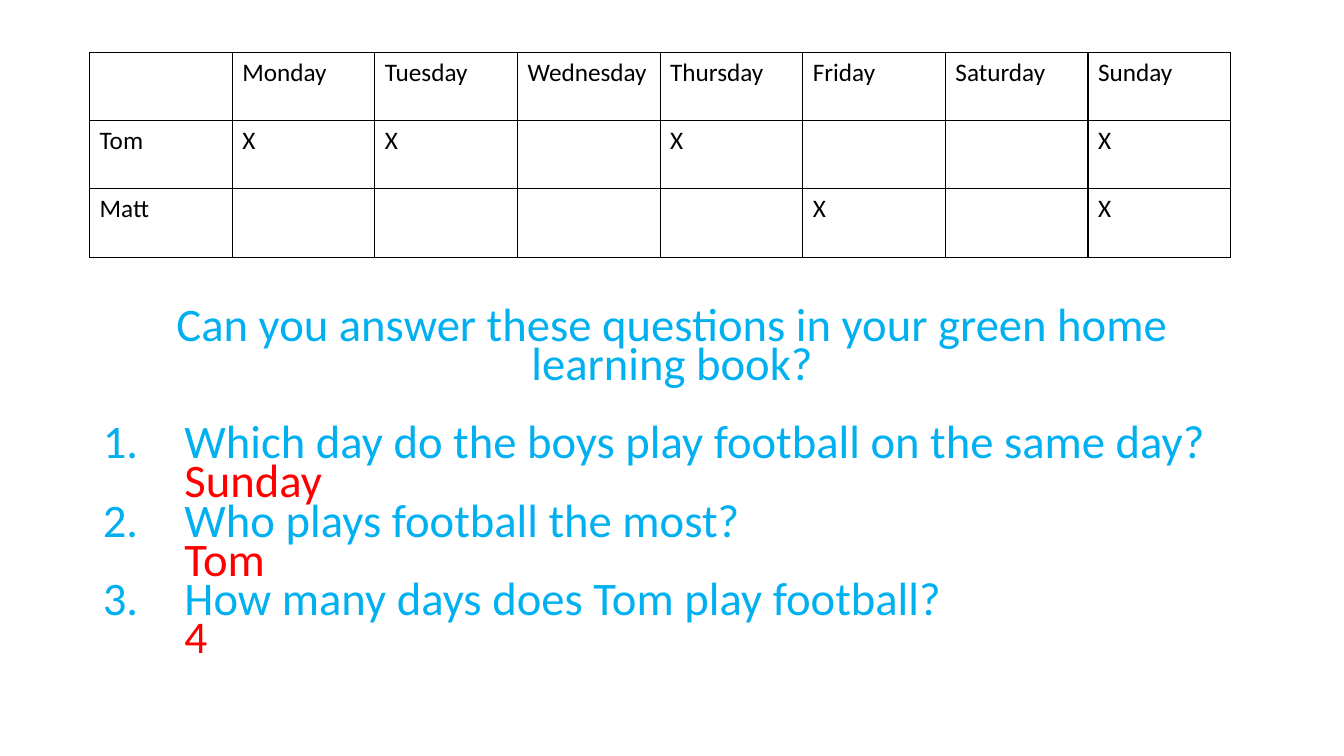
import pptx
import pptx.util
import pptx.dml.color
import pptx.enum.text
import pptx.oxml
import pptx.oxml.ns

# Content
DAYS = ["Monday", "Tuesday", "Wednesday", "Thursday", "Friday", "Saturday", "Sunday"]
PLAYS = {
    "Tom": {"Monday", "Tuesday", "Thursday", "Sunday"},
    "Matt": {"Friday", "Sunday"},
}
HEADING = "Can you answer these questions in your green home learning book?"
# Question, answer, answer size, whether the answer starts on a forced new line
QUIZ = [
    ("Which day do the boys play football on the same day? ", "Sunday", 33.3, False),
    ("Who plays football the most?", "Tom", 33.3, True),
    ("How many days does Tom play football?", "4", 32.4, True),
]

# Look
BLACK = pptx.dml.color.RGBColor(0x00, 0x00, 0x00)
BLUE = pptx.dml.color.RGBColor(0x00, 0xB0, 0xF0)
RED = pptx.dml.color.RGBColor(0xFF, 0x00, 0x00)
FACE = "Calibri"
ALIGN = pptx.enum.text.PP_ALIGN
FRAME = {
    "word_wrap": True,
    "auto_size": pptx.enum.text.MSO_AUTO_SIZE.NONE,
    "vertical_anchor": pptx.enum.text.MSO_ANCHOR.TOP,
}
TIGHT = {"line_spacing": 0.7, "space_before": pptx.util.Pt(0), "space_after": pptx.util.Pt(0)}

# Left, top, width, height in percent of the slide
GRID = (6.67, 6.93, 84.9, 27.1)
HEAD = (6.9, 40.4, 86.25, 15.47)
LIST = (6.9, 55.87, 86.25, 32.67)

deck = pptx.Presentation()
deck.slide_width = pptx.util.Inches(13.33)
deck.slide_height = pptx.util.Inches(7.5)
slide = deck.slides.add_slide(deck.slide_layouts[1])


def place(area):
    sides = (deck.slide_width, deck.slide_height) * 2
    return [int(side * part / 100) for side, part in zip(sides, area)]


def put(item, values):
    for name, value in values.items():
        setattr(item, name, value)


def write(para, text, size, color):
    run = para.add_run()
    run.text = text
    put(run.font, {"name": FACE, "size": pptx.util.Pt(size), "bold": False})
    run.font.color.rgb = color


def settle(shape, area):
    put(shape, dict(zip(("left", "top", "width", "height"), place(area))))
    put(shape.text_frame, FRAME)
    return shape.text_frame


def element(tag, inner="", **marks):
    attrs = "".join(f' {key}="{val}"' for key, val in marks.items())
    space = pptx.oxml.ns.nsdecls("a")
    return pptx.oxml.parse_xml(f"<a:{tag} {space}{attrs}>{inner}</a:{tag}>")


# Table of days played
rows = [[""] + DAYS]
rows += [[boy] + ["X" if day in days else "" for day in DAYS] for boy, days in PLAYS.items()]
table = slide.shapes.add_table(len(rows), len(rows[0]), *place(GRID)).table
put(table, {"first_row": False, "horz_banding": False})
INK = f'<a:solidFill><a:srgbClr val="{BLACK}"/></a:solidFill>'
for r, row in enumerate(rows):
    for c, text in enumerate(row):
        cell = table.cell(r, c)
        props = cell._tc.get_or_add_tcPr()
        for side in "LRTB":
            props.append(element("ln" + side, INK, w=pptx.util.Pt(1)))
        cell.fill.background()
        if text:
            write(cell.text_frame.paragraphs[0], text, 18, BLACK)

# Heading
para = settle(slide.shapes.title, HEAD).paragraphs[0]
put(para, {**TIGHT, "alignment": ALIGN.CENTER})
write(para, HEADING, 33.3, BLUE)

# Numbered questions with answers
frame = settle(slide.placeholders[1], LIST)
indent = pptx.util.Inches(0.81)
for n, (ask, answer, size, fresh) in enumerate(QUIZ):
    para = frame.add_paragraph() if n else frame.paragraphs[0]
    props = para._p.get_or_add_pPr()
    props.set("marL", str(indent))
    props.set("indent", str(-indent))
    props.append(element("buFont", typeface="+mj-lt"))
    props.append(element("buAutoNum", type="arabicPeriod"))
    put(para, {**TIGHT, "alignment": ALIGN.LEFT})
    write(para, ask, 33.3, BLUE)
    if fresh:
        para.add_line_break()
    write(para, answer, size, RED)

deck.save("out.pptx")
